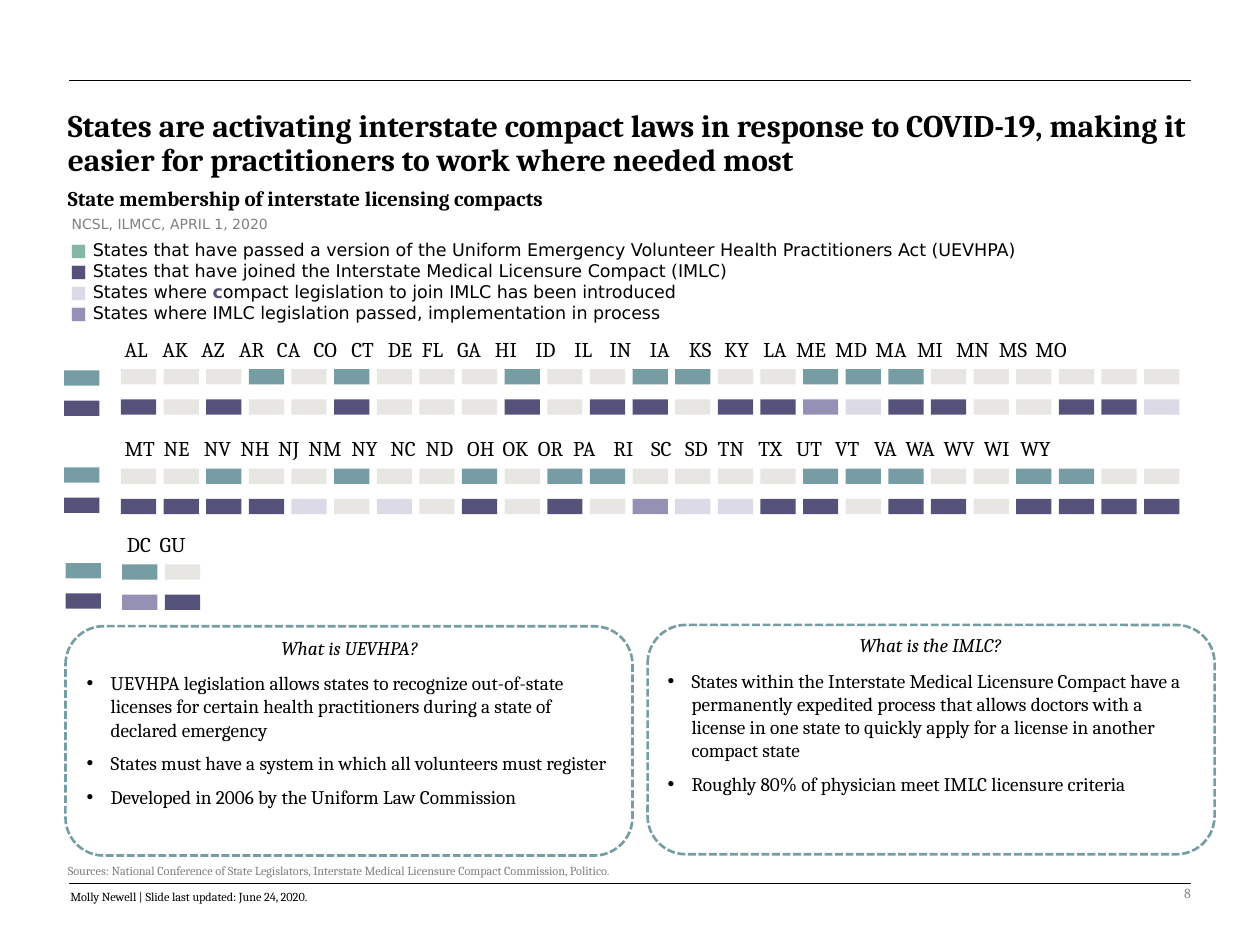
from pptx import Presentation
from pptx.dml.color import RGBColor
from pptx.enum.dml import MSO_LINE
from pptx.enum.shapes import MSO_CONNECTOR, MSO_SHAPE
from pptx.enum.text import MSO_ANCHOR, PP_ALIGN
from pptx.oxml.ns import qn
from pptx.util import Inches, Pt
from lxml import etree

RECT, ROUND = MSO_SHAPE.RECTANGLE, MSO_SHAPE.ROUNDED_RECTANGLE
STRAIGHT, DASH = MSO_CONNECTOR.STRAIGHT, MSO_LINE.SQUARE_DOT
LEFT, CENTER, RIGHT = PP_ALIGN.LEFT, PP_ALIGN.CENTER, PP_ALIGN.RIGHT
TOP, MIDDLE = MSO_ANCHOR.TOP, MSO_ANCHOR.MIDDLE

THEME = {
    "serif": "Cambria", "sans": "DejaVu Sans",
    "black": "000000", "gray": "7F7F7F", "page": "8C8C8C",
    "legend_green": "87B5A8", "teal": "769DA3", "purple": "55527A",
    "lilac": "DBDAE6", "violet": "9491B5", "empty": "E8E6E2",
    "title": 18, "head": 12, "body": 11, "legend": 10, "small": 8, "note": 7,
}
# Cell codes: passed UEVHPA, IMLC member, introduced, in process, none
CODES = {"U": "teal", "M": "purple", "I": "lilac", "P": "violet", ".": "empty"}

prs = Presentation()
prs.slide_width, prs.slide_height = Inches(10), Inches(7.5)
s = prs.slides.add_slide(prs.slide_layouts[6])


def color(name):
    return RGBColor.from_string(THEME[name])


def add_text(box, paragraphs, size, face="serif", tint="black", align=LEFT,
             anchor=TOP, wrap=True, spacing=None, **font):
    """Each paragraph is a list of (text, font overrides) runs; returns the paragraphs."""
    tf = s.shapes.add_textbox(*map(Inches, box)).text_frame
    tf.word_wrap, tf.vertical_anchor = wrap, anchor
    for i, runs in enumerate(paragraphs):
        p = tf.paragraphs[0] if i == 0 else tf.add_paragraph()
        p.alignment = align
        if spacing:
            p.line_spacing = spacing
        for text, changes in runs:
            r = p.add_run()
            r.text = text
            look = {"tint": tint, "bold": False, **font, **changes}
            r.font.color.rgb = color(look.pop("tint"))
            r.font.name, r.font.size = THEME[face], Pt(THEME[size])
            for key, value in look.items():
                setattr(r.font, key, value)
    return tf.paragraphs


# Rules
for y in (7.01, 0.64):
    rule = s.shapes.add_connector(STRAIGHT, Inches(0.55), Inches(y), Inches(9.45), Inches(y))
    rule.line.color.rgb, rule.line.width = color("black"), Pt(0.5)
    etree.SubElement(rule._element.spPr, qn("a:effectLst"))

# Headings and footer: box, text, format
for box, text, look in (
    ((0.44, 0.83, 9.32, 0.7),
     "States are activating interstate compact laws in response to COVID-19, making it "
     "easier for practitioners to work where needed most",
     {"size": "title", "bold": True, "spacing": 0.9}),
    ((0.44, 1.42, 7.18, 0.3), "State membership of interstate licensing compacts",
     {"size": "head", "bold": True}),
    ((0.47, 1.66, 7.04, 0.29), "NCSL, ILMCC, APRIL 1, 2020",
     {"size": "small", "face": "sans", "tint": "gray"}),
    ((0.44, 6.79, 9.02, 0.21),
     "Sources: National Conference of State Legislators, Interstate Medical Licensure "
     "Compact Commission, Politico.",
     {"size": "note", "tint": "gray", "spacing": 1.1}),
    ((0.46, 7.01, 4.31, 0.22), "Molly Newell | Slide last updated: June 24, 2020.",
     {"size": "note"}),
    ((7.06, 6.89, 2.49, 0.4), "8",
     {"size": "small", "tint": "page", "align": RIGHT, "anchor": MIDDLE}),
):
    add_text(box, [[(text, {})]], **look)

# Legend
LEGEND = (
    ("legend_green", [("States that have passed a version of the Uniform Emergency "
                       "Volunteer Health Practitioners Act (UEVHPA)", {})]),
    ("purple", [("States that have joined the Interstate Medical Licensure Compact (IMLC)", {})]),
    ("lilac", [("States where ", {}), ("c", {"tint": "purple", "bold": True}),
               ("ompact legislation to join IMLC has been introduced", {})]),
    ("violet", [("States where IMLC legislation passed, implementation in process", {})]),
)
add_text((0.46, 1.85, 8.64, 0.78),
         [[("■ ", {"tint": key, "bold": True}), *runs] for key, runs in LEGEND],
         "legend", face="sans", wrap=False)

# State bands: label left and top, key left and top, cell left and top,
# one code string per compact, then states with their distances across the slide
CELL_W, CELL_H = 0.28, 0.12
COL, ROW = (9.08 - 0.96) / 24, 0.24
BANDS = (
    ((0.89, 2.62), (0.51, 2.94), (0.96, 2.93),
     ("...U.U...U..UU..UUU......", "M.M..M...M.MM.MMPIMM..MMI"),
     "AL AK AZ AR CA CO CT DE FL GA HI ID IL IN IA KS KY LA ME MD MA MI MN MS MO",
     (0.98, 1.29, 1.6, 1.9, 2.2, 2.49, 2.79, 3.08, 3.35, 3.63, 3.93, 4.25, 4.56, 4.84,
      5.16, 5.47, 5.75, 6.06, 6.32, 6.63, 6.95, 7.28, 7.59, 7.93, 8.22)),
    ((0.89, 3.41), (0.51, 3.71), (0.96, 3.72),
     ("..U..U..U.UU....UUU..UU..", "MMMMI.I.M.M.PIIMM.MM.MMMM"),
     "MT NE NV NH NJ NM NY NC ND OH OK OR PA RI SC SD TN TX UT VT VA WA WV WI WY",
     (0.99, 1.3, 1.62, 1.91, 2.21, 2.45, 2.79, 3.1, 3.38, 3.71, 3.99, 4.27, 4.55, 4.87,
      5.17, 5.44, 5.7, 6.02, 6.32, 6.63, 6.94, 7.19, 7.49, 7.81, 8.1)),
    ((0.91, 4.17), (0.52, 4.47), (0.97, 4.48), ("U.", "PM"), "DC GU", (1.0, 1.27)),
)
for (label_x, label_y), (key_x, key_y), (cell_x, cell_y), codes, states, stops in BANDS:
    p = add_text((label_x, label_y, 8.6, 0.3),
                 [[("\t".join(states.split()), {})]], "head")[0]
    tabs = etree.SubElement(p._p.get_or_add_pPr(), qn("a:tabLst"))
    for stop in stops[1:]:
        etree.SubElement(tabs, qn("a:tab"), pos=str(Inches(stop - label_x - 0.1)), algn="l")
    for row, (key, line) in enumerate(zip("UM", codes)):
        cells = [(key_x, key_y + row * ROW, key)]
        cells += [(cell_x + i * COL, cell_y + row * ROW, code) for i, code in enumerate(line)]
        for x, y, code in cells:
            cell = s.shapes.add_shape(RECT, *map(Inches, (x, y, CELL_W, CELL_H)))
            cell.shadow.inherit = False
            cell.fill.solid()
            cell.fill.fore_color.rgb = color(CODES[code])
            cell.line.fill.background()

# Explanation panels: frame position, text box, heading, bullets
PANELS = (
    ((0.52, 4.97), (0.59, 5, 4.37, 1.67), "What is UEVHPA?",
     ("UEVHPA legislation allows states to recognize out-of-state licenses for certain "
      "health practitioners during a state of declared emergency",
      "States must have a system in which all volunteers must register",
      "Developed in 2006 by the Uniform Law Commission")),
    ((5.14, 4.96), (5.2, 4.98, 4.37, 1.4), "What is the IMLC?",
     ("States within the Interstate Medical Licensure Compact have a permanently expedited "
      "process that allows doctors with a license in one state to quickly apply for a "
      "license in another compact state",
      "Roughly 80% of physician meet IMLC licensure criteria")),
)
INDENT = Inches(0.19)
for corner, box, heading, bullets in PANELS:
    frame = s.shapes.add_shape(ROUND, *map(Inches, (*corner, 4.5, 1.82)))
    frame.shadow.inherit = False
    frame.fill.background()
    frame.line.color.rgb, frame.line.width = color("teal"), Pt(1.5)
    frame.line.dash_style = DASH

    title, *items = add_text(box, [[(heading, {"italic": True})], *([(b, {})] for b in bullets)],
                             "body")
    title.alignment, title.space_after = CENTER, Pt(7)
    for p in items:
        p.space_after = Pt(6)
        pPr = p._p.get_or_add_pPr()
        pPr.set("marL", str(INDENT))
        pPr.set("indent", str(-INDENT))
        etree.SubElement(pPr, qn("a:buFont"), typeface="Arial")
        etree.SubElement(pPr, qn("a:buChar"), char="•")

prs.save("out.pptx")
